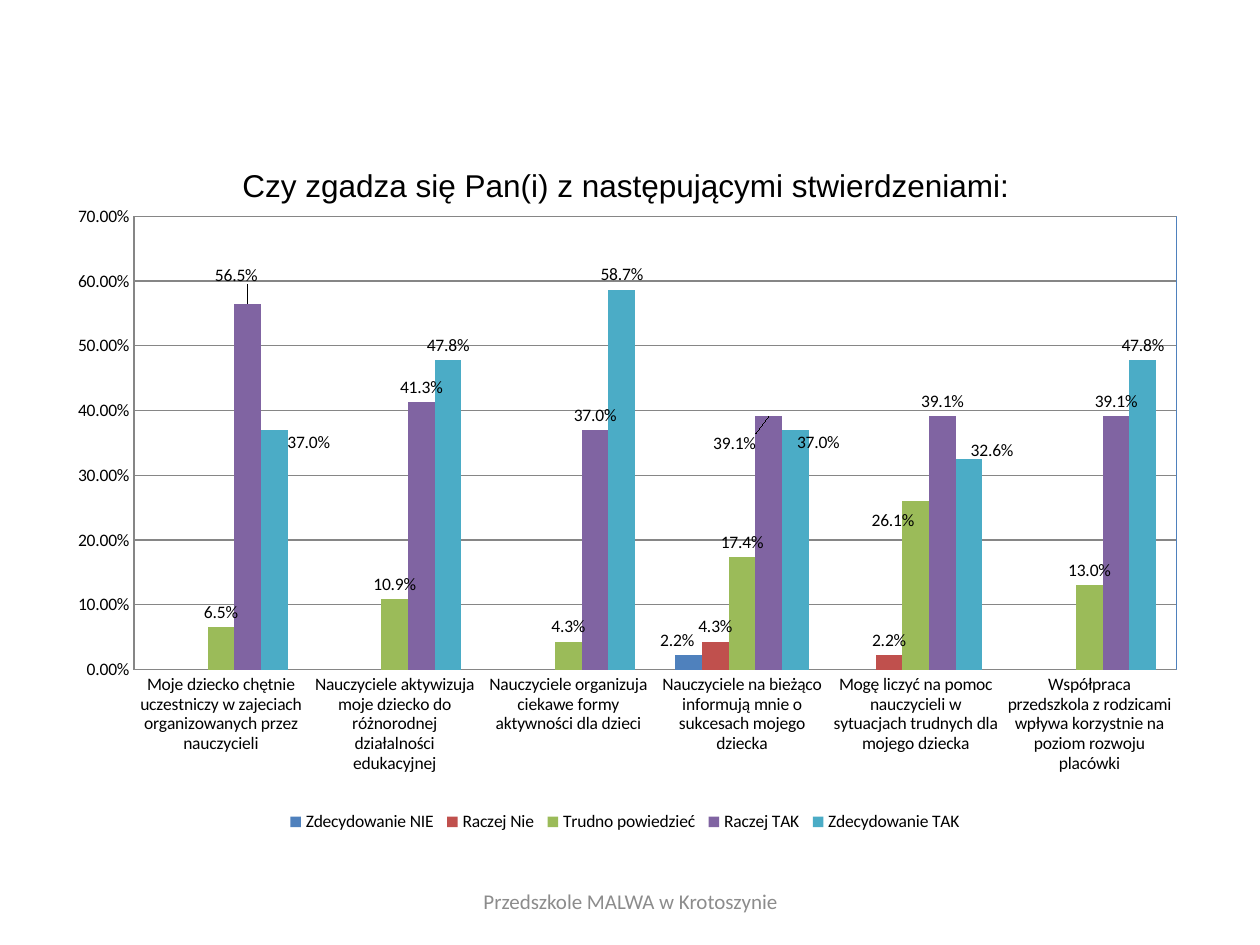
from lxml.etree import SubElement
from pptx import Presentation
from pptx.chart.data import CategoryChartData
from pptx.dml.color import RGBColor
from pptx.enum.chart import XL_CHART_TYPE, XL_LABEL_POSITION, XL_LEGEND_POSITION, XL_TICK_MARK
from pptx.enum.text import MSO_ANCHOR, PP_ALIGN
from pptx.oxml import parse_xml
from pptx.oxml.ns import nsdecls, qn
from pptx.util import Inches, Pt

COLORS = {"text": "000000", "footer": "8C8C8C", "grid": "868686", "frame": "4F81BD"}
CATEGORIES = [
    "Moje dziecko chętnie uczestniczy w zajeciach organizowanych przez nauczycieli",
    "Nauczyciele aktywizuja moje dziecko do różnorodnej działalności edukacyjnej",
    "Nauczyciele organizuja ciekawe formy aktywności dla dzieci",
    "Nauczyciele na bieżąco informują mnie o sukcesach mojego dziecka",
    "Mogę liczyć na pomoc nauczycieli w sytuacjach trudnych dla mojego dziecka",
    "Współpraca przedszkola z rodzicami wpływa korzystnie na poziom rozwoju placówki",
]
# Name, colour, values, and label shifts by category as shares of the chart's size
ANSWERS = [
    ("Zdecydowanie NIE", "4F81BD", [None, None, None, 0.022, None, None],
     {3: (-0.01, 0)}),
    ("Raczej Nie", "C0504D", [None, None, None, 0.043, 0.022, None], {}),
    ("Trudno powiedzieć", "9BBB59", [0.065, 0.109, 0.043, 0.174, 0.261, 0.13],
     {4: (-0.02, 0.05)}),
    ("Raczej TAK", "8064A2", [0.565, 0.413, 0.37, 0.391, 0.391, 0.391],
     {0: (-0.01, -0.02), 3: (-0.03, 0.06)}),
    ("Zdecydowanie TAK", "4BACC6", [0.37, 0.478, 0.587, 0.37, 0.326, 0.478],
     {0: (0.03, 0.04), 3: (0.02, 0.04), 4: (0.02, 0.01)}),
]
LABEL_FORMAT = "0.0%"
NO_LEADER_LINES = (
    f'<c:extLst {nsdecls("c")}><c:ext uri="{{CE6537A1-D6FC-4f65-9D91-7224C49458BB}}" '
    'xmlns:c15="http://schemas.microsoft.com/office/drawing/2012/chart">'
    '<c15:showLeaderLines val="0"/></c:ext></c:extLst>')


def color(name):
    return RGBColor.from_string(COLORS.get(name, name))


def manual_layout(**settings):
    """Return a c:layout element; settings keep the order of the schema."""
    layout = parse_xml(f"<c:layout {nsdecls('c')}><c:manualLayout/></c:layout>")
    for tag, value in settings.items():
        SubElement(layout[0], qn(f"c:{tag}")).set("val", str(value))
    return layout


deck = Presentation()
deck.slide_width, deck.slide_height = Inches(10), Inches(7.5)
page = deck.slides.add_slide(deck.slide_layouts[6])

# Chart
data = CategoryChartData(number_format="0.00%")
data.categories = CATEGORIES
for name, fill, values, shifts in ANSWERS:
    data.add_series(name, values)
chart = page.shapes.add_chart(
    XL_CHART_TYPE.COLUMN_CLUSTERED,
    Inches(0.43), Inches(1.15), Inches(9.06), Inches(5.51), data).chart
chart.font.size = Pt(10)
chart.font.name = "Calibri"
chart.font.color.rgb = color("text")

# Title
title = chart.chart_title
title.include_in_layout = False
heading = title.text_frame.paragraphs[0]
heading.text = "Czy zgadza się Pan(i) z następującymi stwierdzeniami:"
heading.font.name = "Arial"
heading.font.size = Pt(18)
heading.font.bold = False
heading.font.color.rgb = color("text")
for old in title._element.findall(qn("c:layout")):
    title._element.remove(old)
title._element.find(qn("c:tx")).addnext(
    manual_layout(xMode="edge", yMode="edge", x=0.16, y=0.02))

# Legend
chart.has_legend = True
chart.legend.position = XL_LEGEND_POSITION.BOTTOM
chart.legend.include_in_layout = False
for old in chart.legend._element.findall(qn("c:layout")):
    chart.legend._element.remove(old)
chart.legend._element.find(qn("c:legendPos")).addnext(
    manual_layout(xMode="edge", yMode="edge", x=0.2, y=0.96, w=0.6, h=0.04))

# Axes
value_axis, category_axis = chart.value_axis, chart.category_axis
value_axis.minimum_scale, value_axis.maximum_scale = 0, 0.7
value_axis.major_unit = 0.1
value_axis.has_major_gridlines = True
value_axis.tick_labels.number_format = "0.00%"
value_axis.tick_labels.number_format_is_linked = False
for axis in (value_axis, category_axis):
    axis.major_tick_mark = axis.minor_tick_mark = XL_TICK_MARK.NONE
for line in (value_axis.format.line, category_axis.format.line,
             value_axis.major_gridlines.format.line):
    line.color.rgb = color("grid")
    line.width = Pt(0.75)

# Plot area
plot_area = chart._chartSpace.chart.plotArea
for old in plot_area.findall(qn("c:layout")):
    plot_area.remove(old)
plot_area.insert(0, manual_layout(
    layoutTarget="inner", xMode="edge", yMode="edge", x=0.07, y=0.103, w=0.913, h=0.653))
plot_area.append(parse_xml(
    f'<c:spPr {nsdecls("c", "a")}><a:noFill/><a:ln w="9525"><a:solidFill>'
    f'<a:srgbClr val="{COLORS["frame"]}"/></a:solidFill></a:ln></c:spPr>'))

# Columns and their labels
plot = chart.plots[0]
plot.vary_by_categories = False
plot.gap_width, plot.overlap = 150, 0
for series, (name, fill, values, shifts) in zip(plot.series, ANSWERS):
    series.format.fill.solid()
    series.format.fill.fore_color.rgb = color(fill)
    series.invert_if_negative = False
    labels = series.data_labels
    labels.show_value = True
    labels.number_format = LABEL_FORMAT
    labels.number_format_is_linked = False
    labels.position = XL_LABEL_POSITION.OUTSIDE_END
    for index in shifts:
        series.points[index].data_label.position = XL_LABEL_POSITION.OUTSIDE_END
    for label in labels._element.findall(qn("c:dLbl")):
        index = label.find(qn("c:idx"))
        x, y = shifts[int(index.get("val"))]
        layout = manual_layout(x=x, y=y)
        index.addnext(layout)
        layout.addnext(parse_xml(
            f'<c:numFmt {nsdecls("c")} formatCode="{LABEL_FORMAT}" sourceLinked="0"/>'))
    labels._element.append(parse_xml(NO_LEADER_LINES))

# Footer
footer = page.shapes.add_textbox(Inches(3.42), Inches(6.95), Inches(3.17), Inches(0.4))
footer.text_frame.word_wrap = True
footer.text_frame.vertical_anchor = MSO_ANCHOR.MIDDLE
para = footer.text_frame.paragraphs[0]
para.text = "Przedszkole MALWA w Krotoszynie"
para.alignment = PP_ALIGN.CENTER
para.font.name = "Calibri"
para.font.size = Pt(12)
para.font.color.rgb = color("footer")

deck.save("out.pptx")
